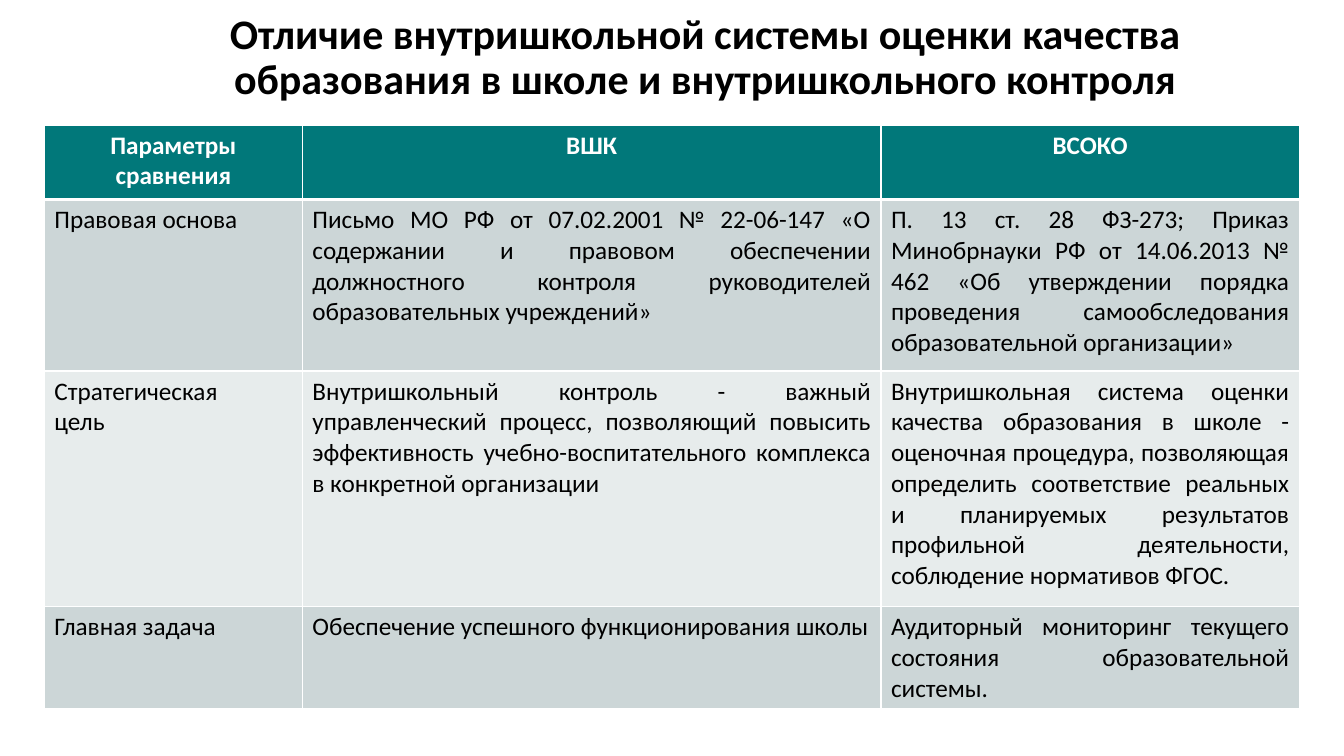
import pptx
import pptx.dml.color
import pptx.enum.text
import pptx.oxml
import pptx.oxml.ns
import pptx.util
from lxml import etree

Pt = pptx.util.Pt
RGBColor = pptx.dml.color.RGBColor
ALIGN = pptx.enum.text.PP_ALIGN
ANCHOR = pptx.enum.text.MSO_ANCHOR

BLACK = RGBColor(0x00, 0x00, 0x00)
WHITE = RGBColor(0xFF, 0xFF, 0xFF)
TEAL = RGBColor(0x01, 0x78, 0x7A)
BAND_DARK = RGBColor(0xCC, 0xD6, 0xD7)
BAND_LIGHT = RGBColor(0xE7, 0xEC, 0xEC)

TITLE = "Отличие внутришкольной системы оценки качества образования в школе и внутришкольного контроля"
HEADERS = ["Параметры сравнения", "ВШК", "ВСОКО"]
COMPARISON = [
    ["Правовая основа",
     "Письмо МО РФ от 07.02.2001 № 22-06-147 «О содержании и правовом обеспечении "
     "должностного контроля руководителей образовательных учреждений»",
     "П. 13 ст. 28 ФЗ-273; Приказ Минобрнауки РФ от 14.06.2013 № 462 «Об утверждении "
     "порядка проведения самообследования образовательной организации»"],
    ["Стратегическая\nцель",
     "Внутришкольный контроль - важный управленческий процесс, позволяющий повысить "
     "эффективность учебно-воспитательного комплекса в конкретной организации",
     "Внутришкольная система оценки качества образования в школе - оценочная процедура, "
     "позволяющая определить соответствие реальных и планируемых результатов профильной "
     "деятельности, соблюдение нормативов ФГОС."],
    ["Главная задача",
     "Обеспечение успешного функционирования школы",
     "Аудиторный мониторинг текущего состояния образовательной системы."],
]
COLUMN_WIDTHS = [184.3, 413.3, 298.8]
ROW_HEIGHTS = [53.3, 122.4, 168.5, 73]


def write_text(frame, text, size=18, color=BLACK, bold=False, align=ALIGN.LEFT, line_spacing=1.0):
    """Fill a text frame, one paragraph for each line of the text."""
    for index, line in enumerate(text.split("\n")):
        paragraph = frame.paragraphs[0] if index == 0 else frame.add_paragraph()
        paragraph.alignment = align
        paragraph.line_spacing = line_spacing
        run = paragraph.add_run()
        run.text = line
        run.font.name = "Calibri"
        run.font.size = Pt(size)
        run.font.bold = bold
        run.font.color.rgb = color


def set_borders(cell, widths):
    """Draw white borders; widths maps lnL, lnR, lnT and lnB to points."""
    properties = cell._tc.get_or_add_tcPr()
    for position, (side, width) in enumerate(widths.items()):
        line = etree.Element(pptx.oxml.ns.qn("a:" + side), w=str(Pt(width)))
        fill = etree.SubElement(line, pptx.oxml.ns.qn("a:solidFill"))
        etree.SubElement(fill, pptx.oxml.ns.qn("a:srgbClr"), val=str(WHITE))
        properties.insert(position, line)


def add_title(slide, left, top, width, height):
    box = slide.shapes.add_textbox(Pt(left), Pt(top), Pt(width), Pt(height))
    frame = box.text_frame
    frame.word_wrap = True
    frame.vertical_anchor = ANCHOR.MIDDLE
    frame.margin_top = Pt(9.6)
    write_text(frame, TITLE, size=30, bold=True, align=ALIGN.CENTER, line_spacing=0.9)


def add_comparison_table(slide, left, top):
    rows = [HEADERS] + COMPARISON
    table = slide.shapes.add_table(
        len(rows), len(HEADERS), Pt(left), Pt(top),
        Pt(sum(COLUMN_WIDTHS)), Pt(sum(ROW_HEIGHTS))).table
    for column, width in zip(table.columns, COLUMN_WIDTHS):
        column.width = Pt(width)
    for row, height in zip(table.rows, ROW_HEIGHTS):
        row.height = Pt(height)

    for row_index, texts in enumerate(rows):
        is_header = row_index == 0
        band = BAND_DARK if row_index % 2 else BAND_LIGHT
        for column_index, text in enumerate(texts):
            cell = table.cell(row_index, column_index)
            cell.fill.solid()
            cell.fill.fore_color.rgb = TEAL if is_header else band
            set_borders(cell, {"lnL": 1, "lnR": 1,
                               "lnT": 3 if row_index == 1 else 1,
                               "lnB": 3 if is_header else 1})
            if is_header:
                write_text(cell.text_frame, text, color=WHITE, bold=True, align=ALIGN.CENTER)
            else:
                write_text(cell.text_frame, text,
                           align=ALIGN.JUSTIFY if column_index else ALIGN.LEFT)


def main():
    presentation = pptx.Presentation()
    presentation.slide_width = Pt(960)
    presentation.slide_height = Pt(540)
    slide = presentation.slides.add_slide(presentation.slide_layouts[6])
    add_title(slide, 90, 19.4, 828, 39)
    add_comparison_table(slide, 31.7, 89.3)
    presentation.save("out.pptx")


if __name__ == "__main__":
    main()
